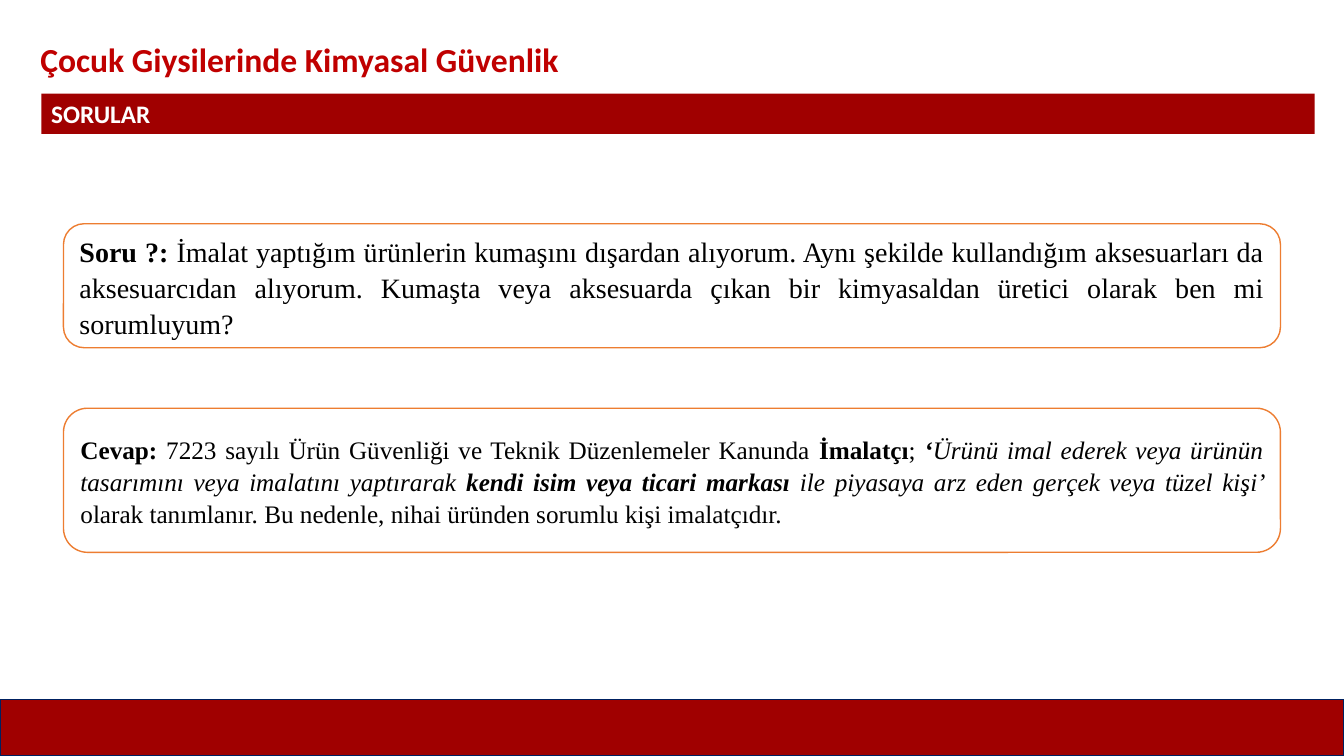
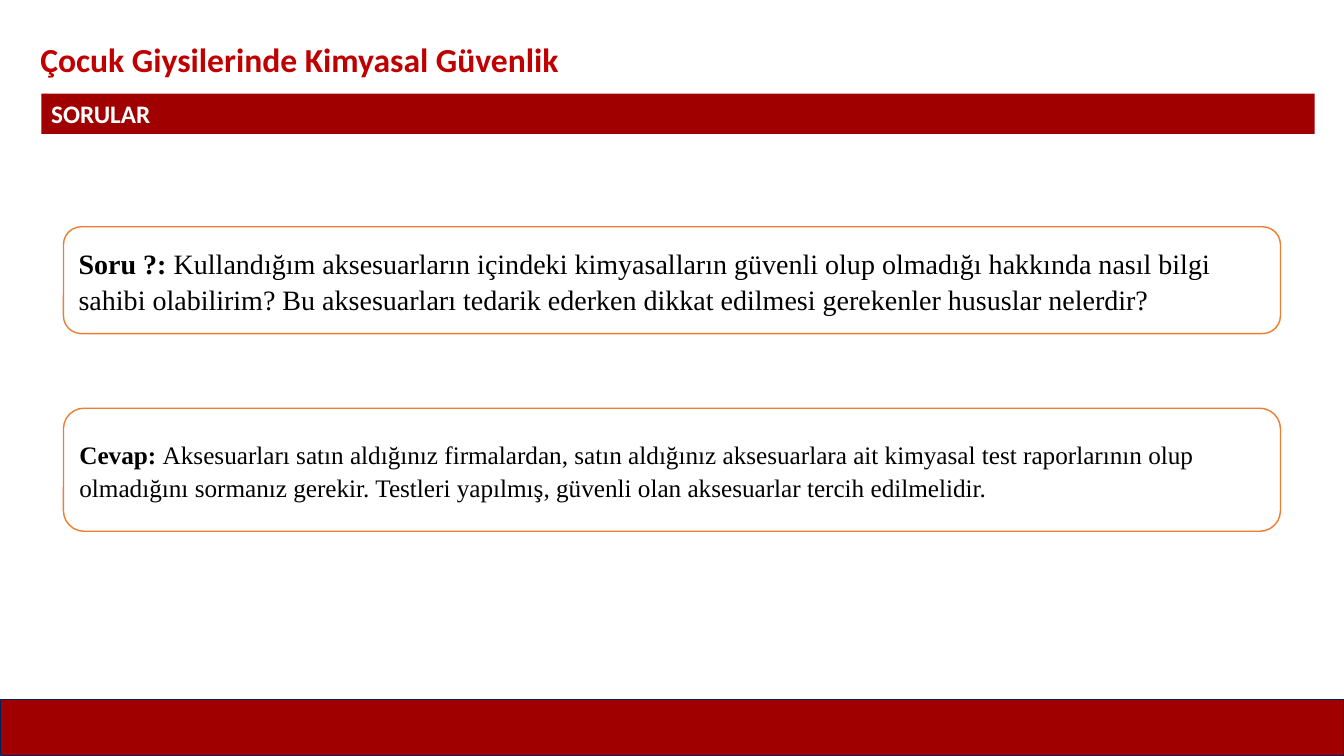
from pptx import Presentation
from pptx.dml.color import RGBColor
from pptx.enum.shapes import MSO_SHAPE as SHAPE
from pptx.enum.text import MSO_ANCHOR as ANCHOR, MSO_AUTO_SIZE as FIT, PP_ALIGN as ALIGN
from pptx.util import Inches, Pt

RED, TITLE_RED, NAVY, ORANGE = "A00000", "C00000", "002060", "ED7D31"
WHITE, BLACK = "FFFFFF", "000000"
SANS, SERIF = "Calibri", "Times New Roman"

QUESTION_1 = [
    ("Soru ?: ", "b"),
    ("İmalat yaptığım ürünlerin kumaşını dışardan alıyorum. Aynı şekilde "
     "kullandığım aksesuarları da aksesuarcıdan alıyorum. Kumaşta veya aksesuarda "
     "çıkan bir kimyasaldan üretici olarak ben mi sorumluyum?", ""),
]
ANSWER_1 = [
    ("Cevap: ", "b"),
    ("7223 sayılı Ürün Güvenliği ve Teknik Düzenlemeler Kanunda ", ""),
    ("İmalatçı", "b"),
    ("; ", ""),
    ("‘", "bi"),
    ("Ürünü imal ederek veya ürünün tasarımını veya imalatını yaptırarak ", "i"),
    ("kendi isim veya ticari markası", "bi"),
    (" ile piyasaya arz eden gerçek veya tüzel kişi’ ", "i"),
    ("olarak tanımlanır. Bu nedenle, nihai üründen sorumlu kişi imalatçıdır.", ""),
]
QUESTION_2 = [
    ("Soru ?: ", "b"),
    ("Kullandığım aksesuarların içindeki kimyasalların güvenli olup olmadığı "
     "hakkında nasıl bilgi sahibi olabilirim? Bu aksesuarları tedarik ederken "
     "dikkat edilmesi gerekenler hususlar nelerdir?", ""),
]
ANSWER_2 = [
    ("Cevap: ", "b"),
    ("Aksesuarları satın aldığınız firmalardan, satın aldığınız aksesuarlara ait "
     "kimyasal test raporlarının olup olmadığını sormanız gerekir. Testleri yapılmış, "
     "güvenli olan aksesuarlar tercih edilmelidir.", ""),
]


def rgb(value):
    """Turn a hex string into a colour."""
    return RGBColor.from_string(value)


def write(sp, runs, size, font=SERIF, color=BLACK, align=ALIGN.LEFT,
          anchor=ANCHOR.TOP, line=1.0, after=0):
    """Fill a shape with one paragraph of (text, style) runs; styles use b and i."""
    tf = sp.text_frame
    tf.word_wrap = True
    tf.auto_size = FIT.NONE
    tf.vertical_anchor = anchor
    tf.margin_left = tf.margin_right = Inches(0.1)
    tf.margin_top = tf.margin_bottom = Inches(0.05)
    p = tf.paragraphs[0]
    p.alignment, p.line_spacing = align, line
    p.space_before, p.space_after = Pt(0), Pt(after)
    for text, style in runs:
        r = p.add_run()
        r.text = text
        r.font.name, r.font.size = font, Pt(size)
        r.font.bold, r.font.italic = "b" in style, "i" in style
        r.font.color.rgb = rgb(color)


class Deck:
    """Hold the shared style and the current slide."""

    def __init__(self):
        """Start an empty widescreen presentation."""
        self.prs = Presentation()
        self.prs.slide_width, self.prs.slide_height = Inches(13.33), Inches(7.5)
        self.s = None

    def shape(self, kind, box, fill, line=None):
        """Add a filled shape with an optional outline."""
        sp = self.s.shapes.add_shape(kind, *map(Inches, box))
        sp.shadow.inherit = False
        sp.fill.solid()
        sp.fill.fore_color.rgb = rgb(fill)
        if line:
            sp.line.color.rgb = rgb(line)
            sp.line.width = Pt(1)
        else:
            sp.line.fill.background()
        return sp

    def slide(self, title, section):
        """Add a slide with its title, section bar and footer band."""
        self.s = self.prs.slides.add_slide(self.prs.slide_layouts[5])
        self.shape(SHAPE.RECTANGLE, (0, 6.94, 13.33, 0.56), RED, NAVY)
        bar = self.shape(SHAPE.RECTANGLE, (0.41, 0.93, 12.63, 0.4), RED)
        write(bar, [(section, "b")], 18, SANS, WHITE, ALIGN.JUSTIFY)
        sp = self.s.shapes.title
        sp.left, sp.top, sp.width, sp.height = map(Inches, (0.3, 0.34, 12.29, 0.5))
        write(sp, [(title, "b")], 24, SANS, TITLE_RED)

    def card(self, top, height, runs, size, align):
        """Add a rounded card holding a question or an answer."""
        sp = self.shape(SHAPE.ROUNDED_RECTANGLE, (0.63, top, 12.07, height), WHITE, ORANGE)
        write(sp, runs, size, align=align, anchor=ANCHOR.MIDDLE, line=1.07, after=8)


def main():
    """Build and save the slides."""
    deck = Deck()
    pages = [
        (ALIGN.JUSTIFY, (2.22, 1.23, QUESTION_1), (4.05, 1.43, ANSWER_1)),
        (ALIGN.LEFT, (2.25, 1.06, QUESTION_2), (4.05, 1.22, ANSWER_2)),
    ]
    for align, question, answer in pages:
        deck.slide("Çocuk Giysilerinde Kimyasal Güvenlik", "SORULAR")
        deck.card(*question, 20, align)
        deck.card(*answer, 18, align)
    deck.prs.save("out.pptx")


if __name__ == "__main__":
    main()
